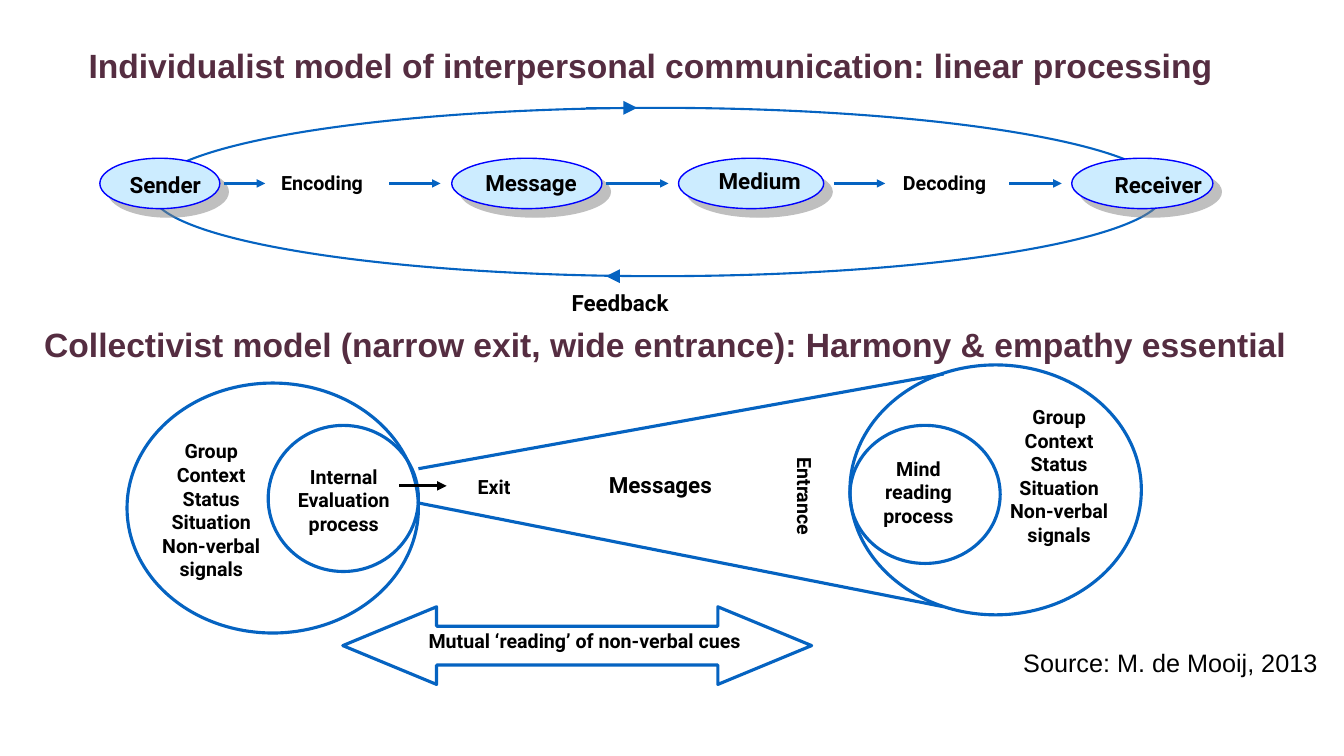
from lxml import etree
from pptx import Presentation
from pptx.dml.color import RGBColor
from pptx.enum.shapes import MSO_CONNECTOR, MSO_SHAPE
from pptx.enum.text import MSO_AUTO_SIZE, PP_ALIGN
from pptx.oxml.ns import qn
from pptx.util import Inches, Pt

LEFT, CENTER, RIGHT = PP_ALIGN.LEFT, PP_ALIGN.CENTER, PP_ALIGN.RIGHT
OVAL, DOUBLE_ARROW = MSO_SHAPE.OVAL, MSO_SHAPE.LEFT_RIGHT_ARROW
STRAIGHT = MSO_CONNECTOR.STRAIGHT

COLORS = {"blue": "0563C1", "edge": "0000FF", "pale": "CCECFF",
          "shadow": "808080", "black": "000000", "plum": "552D41"}
WIDTH, HEIGHT = 13.33, 7.5

# Individualist model: one row of stages
FLOW_Y, STAGE_TOP, STAGE_HEIGHT = 1.82, 1.57, 0.5
LOOP = (1.5, 1.07, 10.05, 1.67)
STAGES = [(0.99, 1.19), (4.48, 1.49), (6.73, 1.44), (10.63, 1.4)]  # left, width
STAGE_LABELS = [  # text, left, top, width, size
    ("Sender", 1.14, 1.65, 0.95, 16), ("Encoding", 2.62, 1.65, 1.08, 14),
    ("Message", 4.68, 1.63, 1.14, 16), ("Medium", 7, 1.61, 1.04, 16),
    ("Decoding", 8.8, 1.65, 1.08, 14), ("Receiver", 10.89, 1.65, 1.13, 16)]
FLOW_ARROWS = [(2.22, 2.63), (3.86, 4.37), (6.01, 6.63), (8.27, 8.78), (10.01, 10.53)]
LOOP_ARROWS = [(6.73, 6.01, LOOP[1] + LOOP[3]), (5.81, 6.32, LOOP[1])]

# Collectivist model: two outer circles of one size, each with an inner one
OUTER = (2.89, 2.48)
CIRCLES = [(8.43, 3.62, *OUTER), (2.66, 4.22, 1.49, 1.45),
           (1.26, 3.8, *OUTER), (8.43, 4.22, 1.49, 1.37)]
CUES_ARROW = (3.4, 6.02, 4.65, 0.77)
FUNNEL = [(4.15, 4.65, 9.36, 3.71), (4.15, 4.99, 9.36, 6.02)]
EXIT_ARROW = (3.96, 4.82, 4.43, 4.82)
CONTEXT = "Group\nContext\nStatus\nSituation\nNon-verbal\nsignals"
MODEL_LABELS = [  # text, place, size, rotation
    ("Feedback", (5.54, 2.82, 1.22, 0.37), 16, 0),
    (CONTEXT, (1.49, 4.31, 1.21, 1.5), 14, 0),
    ("Mutual ‘reading’ of non-verbal cues", (4.07, 6.19, 3.46, 0.33), 14, 0),
    (CONTEXT, (9.9, 3.97, 1.21, 1.5), 14, 0),
    ("Internal\nEvaluation\nprocess", (2.82, 4.56, 1.18, 0.8), 14, 0),
    ("Mind\nreading\nprocess", (8.64, 4.48, 0.94, 0.8), 14, 0),
    ("Entrance", (7.47, 4.76, 1.03, 0.33), 14, 90),
    ("Exit", (4.62, 4.66, 0.56, 0.33), 14, 0),
    ("Messages", (5.92, 4.62, 1.26, 0.37), 16, 0)]

TITLES = [
    ("Individualist model of interpersonal communication: linear processing",
     (0.78, 0.4, 11.45, 0.5), False),
    ("Collectivist model (narrow exit, wide entrance): Harmony & empathy essential",
     (0.34, 3.16, 12.83, 0.5), True)]
SOURCE = ("Source: M. de Mooij, 2013", (10.05, 6.37, 3.12, 0.4))


def color(name):
    return RGBColor.from_string(COLORS[name])


def add_outline(page, kind, place, line="blue", weight=2.25, fill=None):
    shape = page.shapes.add_shape(kind, *map(Inches, place))
    shape.shadow.inherit = False
    if fill:
        shape.fill.solid()
        shape.fill.fore_color.rgb = color(fill)
    else:
        shape.fill.background()
    shape.line.color.rgb = color(line)
    shape.line.width = Pt(weight)
    return shape


def drop_shadow(shape):
    effects = shape._element.spPr.find(qn("a:effectLst"))
    shadow = etree.SubElement(effects, qn("a:outerShdw"), dist=str(Pt(8.5)),
                              dir=str(45 * 60000), algn="ctr", rotWithShape="0")
    tint = etree.SubElement(shadow, qn("a:srgbClr"), val=COLORS["shadow"])
    etree.SubElement(tint, qn("a:alpha"), val="50000")


def add_line(page, ends, weight, line="blue", head=None):
    """head is the arrowhead size, med or lg; None leaves a plain line."""
    connector = page.shapes.add_connector(STRAIGHT, *map(Inches, ends))
    connector.line.color.rgb = color(line)
    connector.line.width = Pt(weight)
    if head:
        etree.SubElement(connector.line._get_or_add_ln(), qn("a:tailEnd"),
                         type="triangle", w=head, len=head)
    etree.SubElement(connector._element.spPr, qn("a:effectLst"))


def add_text(page, text, place, size, align=CENTER, font="Roboto",
             ink="black", bold=True, wrap=False, rotation=0):
    box = page.shapes.add_textbox(*map(Inches, place))
    box.rotation = rotation
    frame = box.text_frame
    frame.text = text
    frame.word_wrap = wrap
    frame.auto_size = MSO_AUTO_SIZE.SHAPE_TO_FIT_TEXT
    for para in frame.paragraphs:
        para.alignment = align
        for span in para.runs:
            span.font.name = font
            span.font.size = Pt(size)
            span.font.bold = bold
            span.font.color.rgb = color(ink)


def draw_individualist(page):
    add_outline(page, OVAL, LOOP, weight=1.5)
    for left, width in STAGES:
        place = (left, STAGE_TOP, width, STAGE_HEIGHT)
        drop_shadow(add_outline(page, OVAL, place, "edge", 1, "pale"))
    for text, left, top, width, size in STAGE_LABELS:
        height = 0.37 if size == 16 else 0.33
        add_text(page, text, (left, top, width, height), size, RIGHT)
    for start, end in FLOW_ARROWS:
        add_line(page, (start, FLOW_Y, end, FLOW_Y), 2, head="med")
    for start, end, y in LOOP_ARROWS:
        add_line(page, (start, y, end, y), 1, head="lg")


def draw_collectivist(page):
    for place in CIRCLES:
        add_outline(page, OVAL, place)
    cues = add_outline(page, DOUBLE_ARROW, CUES_ARROW)
    cues.adjustments[0], cues.adjustments[1] = 0.5, 1.208
    for ends in FUNNEL:
        add_line(page, ends, 2.25)
    add_line(page, EXIT_ARROW, 2.25, "black", "med")
    for text, place, size, rotation in MODEL_LABELS:
        add_text(page, text, place, size, rotation=rotation)


def main():
    deck = Presentation()
    deck.slide_width, deck.slide_height = Inches(WIDTH), Inches(HEIGHT)
    page = deck.slides.add_slide(deck.slide_layouts[6])
    draw_individualist(page)
    draw_collectivist(page)
    for text, place, wrap in TITLES:
        add_text(page, text, place, 24, LEFT, "Arial", "plum", wrap=wrap)
    add_text(page, *SOURCE, 18, LEFT, "Arial", bold=False)
    deck.save("out.pptx")


if __name__ == "__main__":
    main()
